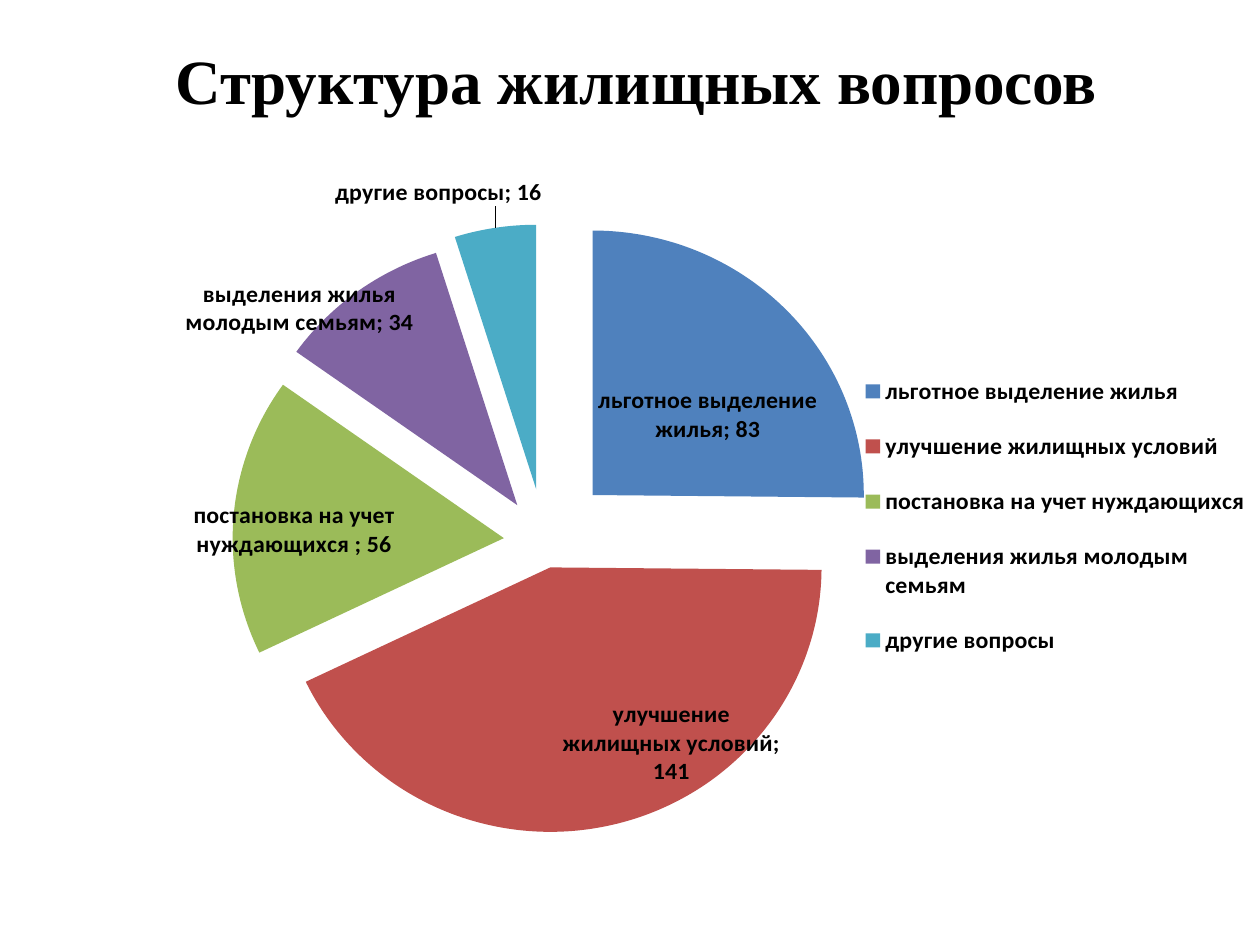
"""Builds a slide with an exploded pie chart of housing questions."""
from lxml.etree import SubElement
from pptx import Presentation
from pptx.chart.data import CategoryChartData
from pptx.dml.color import RGBColor
from pptx.enum.chart import XL_CHART_TYPE, XL_LABEL_POSITION, XL_LEGEND_POSITION
from pptx.enum.text import MSO_ANCHOR, PP_ALIGN
from pptx.oxml.ns import qn
from pptx.util import Inches, Pt

TITLE = "Структура жилищных вопросов"
SLICES = [
    ("льготное выделение жилья", 83, "4F81BD", 25, (-0.16, 0.19)),
    ("улучшение жилищных условий", 141, "C0504D", 10, (-0.04, -0.18)),
    ("постановка на учет нуждающихся ", 56, "9BBB59", 15, (0.14, 0.02)),
    ("выделения жилья молодым семьям", 34, "8064A2", 17, (0.05, 0.07)),
    ("другие вопросы", 16, "4BACC6", 20, (0.04, -0.02)),
]
THEME = {"ink": "000000", "head": "Times New Roman", "body": "Calibri",
         "title": 36, "base": 10, "label": 14}
EXPLODE = 25
PLOT = (0.11, 0.09, 0.59, 0.9)
LEGEND = (0.67, 0.28, 0.32, 0.45)


def style(font, size, face=THEME["body"], bold=True):
    font.name, font.size, font.bold = face, Pt(size), bold
    font.color.rgb = RGBColor.from_string(THEME["ink"])


def write(shape, text, size, face, align=PP_ALIGN.CENTER):
    frame = shape.text_frame
    frame.word_wrap = True
    frame.vertical_anchor = MSO_ANCHOR.MIDDLE
    para = frame.paragraphs[0]
    para.alignment = align
    run = para.add_run()
    run.text = text
    style(run.font, size, face)


def place(node, index, nums, fixed=False):
    for old in node.findall(qn("c:layout")):
        node.remove(old)
    layout = SubElement(node, qn("c:layout"))
    node.insert(index, layout)
    manual = SubElement(layout, qn("c:manualLayout"))
    if fixed:
        if node.tag == qn("c:plotArea"):
            SubElement(manual, qn("c:layoutTarget")).set("val", "inner")
        for mode in ("xMode", "yMode"):
            SubElement(manual, qn("c:" + mode)).set("val", "edge")
    for key, num in zip("xywh", nums):
        SubElement(manual, qn("c:" + key)).set("val", str(num))


def burst(node, mark, amount):
    part = SubElement(node, qn("c:explosion"))
    part.set("val", str(amount))
    node.find(qn(mark)).addprevious(part)


def add_pie(slide):
    data = CategoryChartData()
    data.categories = [name for name, *_ in SLICES]
    data.add_series("Series 1", [count for _, count, *_ in SLICES])
    chart = slide.shapes.add_chart(
        XL_CHART_TYPE.PIE, Inches(0.2), Inches(1.15),
        Inches(9.8), Inches(6.14), data).chart
    chart.has_title = False
    style(chart.font, THEME["base"], bold=False)
    chart.has_legend = True
    legend = chart.legend
    legend.position = XL_LEGEND_POSITION.RIGHT
    legend.include_in_layout = False
    style(legend.font, THEME["label"])
    place(legend._element, 1, LEGEND, True)
    plot = chart.plots[0]
    plot.vary_by_categories = True
    place(plot._element.getparent(), 0, PLOT, True)
    series = plot.series[0]
    labels = series.data_labels
    labels.show_value = labels.show_category_name = True
    style(labels.font, THEME["label"])
    for i, (_, _, color, *_) in enumerate(SLICES):
        point = series.points[i]
        fill = point.format.fill
        fill.solid()
        fill.fore_color.rgb = RGBColor.from_string(color)
        label = point.data_label
        style(label.font, THEME["label"])
        label.position = XL_LABEL_POSITION.BEST_FIT
    root = series._element
    burst(root, "c:dPt", EXPLODE)
    parts = root.findall(qn("c:dPt"))
    tags = root.find(qn("c:dLbls")).findall(qn("c:dLbl"))
    for part, tag, (*_, gap, shift) in zip(parts, tags, SLICES):
        burst(part, "c:spPr", gap)
        place(tag, 1, shift)
        tag.find(qn("c:showCatName")).set("val", "1")
        SubElement(tag, qn("c:separator")).text = "; "


def main():
    deck = Presentation()
    deck.slide_width, deck.slide_height = Inches(10), Inches(7.5)
    slide = deck.slides.add_slide(deck.slide_layouts[5])
    title = slide.shapes.title
    title.left, title.top = Inches(0.8), Inches(0.26)
    title.width, title.height = Inches(8.5), Inches(0.74)
    write(title, TITLE, THEME["title"], THEME["head"])
    add_pie(slide)
    deck.save("out.pptx")


if __name__ == "__main__":
    main()
